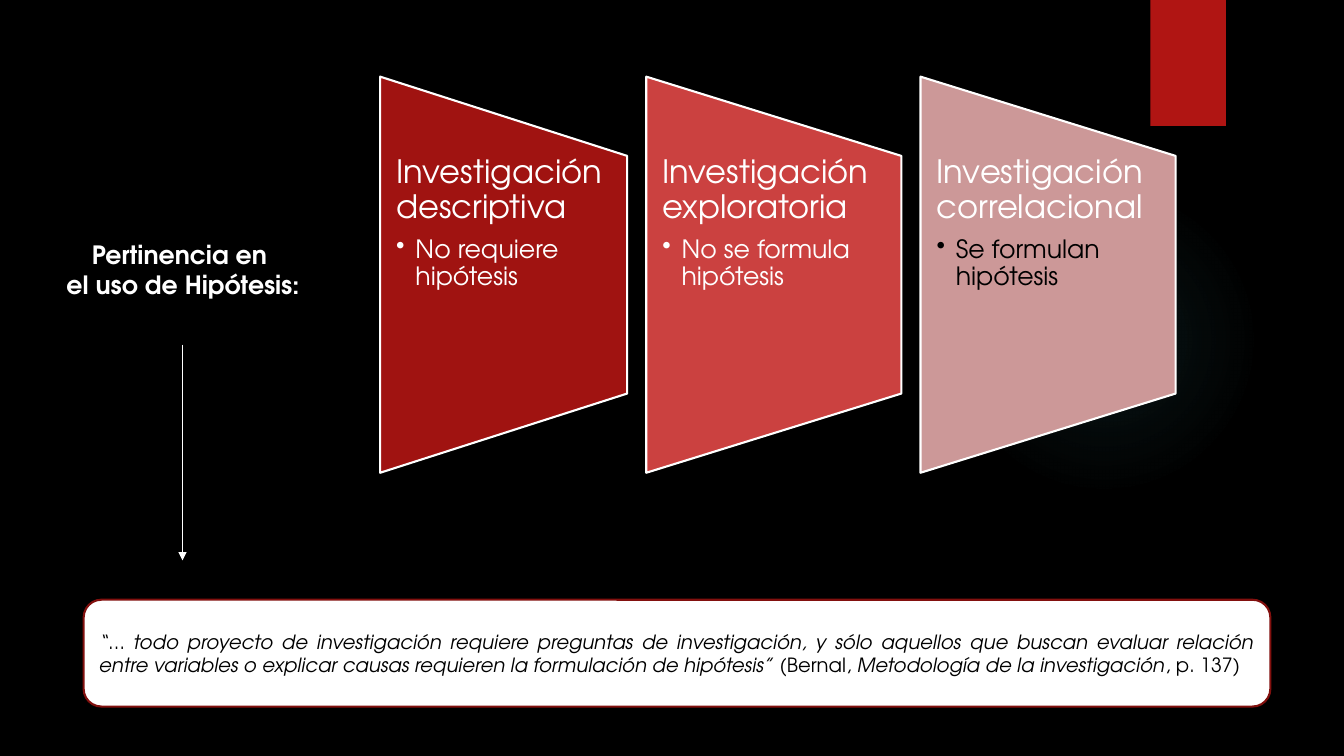
"""Build the slide on when each type of research needs a hypothesis."""
from dataclasses import dataclass

from lxml import etree
from pptx import Presentation
from pptx import util as u
from pptx.dml.color import RGBColor
from pptx.enum import shapes, text
from pptx.oxml import ns, parse_xml


@dataclass(frozen=True)
class Theme:
    font: str = "TeX Gyre Adventor"
    black: str = "000000"
    white: str = "FFFFFF"
    ribbon: str = "B01513"
    quote_edge: str = "82100E"
    glow: str = "50B9C1"
    panel_size: int = 23
    body_size: int = 18
    quote_size: int = 14
    edge: float = 1.5
    thin: float = 0.75


class HypothesisSlide:
    def __init__(self, deck, theme):
        self.theme = theme
        self.slide = deck.slides.add_slide(deck.slide_layouts[5])
        background = self.slide.background.fill
        background.solid()
        background.fore_color.rgb = RGBColor.from_string(theme.black)

    def style(self, paragraph, size, color, **flags):
        font = paragraph.font
        font.name, font.size = self.theme.font, u.Pt(size)
        font.color.rgb = RGBColor.from_string(color)
        for flag, value in flags.items():
            setattr(font, flag, value)

    def block(self, preset, box, fill, edge=None):
        block = self.slide.shapes.add_shape(preset, *map(u.Inches, box))
        block.shadow.inherit = False
        block.fill.solid()
        block.fill.fore_color.rgb = RGBColor.from_string(fill)
        if edge:
            block.line.color.rgb = RGBColor.from_string(edge)
            block.line.width = u.Pt(self.theme.edge)
        else:
            block.line.fill.background()
        return block

    def glow(self, box, stops):
        halo = self.block(shapes.MSO_SHAPE.OVAL, box, self.theme.glow)
        colors = "".join(
            f'<a:gs pos="{place * 1000}"><a:srgbClr val="{self.theme.glow}">'
            f'<a:alpha val="{opacity * 1000}"/></a:srgbClr></a:gs>'
            for place, opacity in stops)
        gradient = parse_xml(
            f'<a:gradFill {ns.nsdecls("a")}><a:gsLst>{colors}</a:gsLst>'
            '<a:path path="circle"><a:fillToRect l="50000" t="50000" '
            'r="50000" b="50000"/></a:path></a:gradFill>')
        solid = halo.element.spPr.find(ns.qn("a:solidFill"))
        solid.getparent().replace(solid, gradient)

    def title(self, box, lines):
        title = self.slide.shapes.title
        title.left, title.top, title.width, title.height = map(u.Inches, box)
        frame = title.text_frame
        frame.auto_size = text.MSO_AUTO_SIZE.NONE
        frame.vertical_anchor = text.MSO_ANCHOR.TOP
        frame.text = "\n".join(lines)
        for paragraph in frame.paragraphs:
            paragraph.alignment = text.PP_ALIGN.CENTER
            self.style(paragraph, self.theme.body_size, self.theme.white, bold=True)

    def panel(self, left, top, width, height, fill, heading, point, point_color):
        self.block(shapes.MSO_SHAPE.FLOWCHART_MANUAL_OPERATION,
                   (left + (width - height) / 2, top + (height - width) / 2,
                    height, width), fill, self.theme.white).rotation = 270
        label = self.slide.shapes.add_textbox(
            *map(u.Inches, (left, top + height / 5, width, height * 3 / 5)))
        frame = label.text_frame
        frame.word_wrap = True
        frame.margin_left = frame.margin_right = u.Inches(0.16)
        frame.margin_top = frame.margin_bottom = 0
        frame.text = f"{heading}\n{point}"
        first, second = frame.paragraphs
        first.line_spacing = second.line_spacing = 0.9
        first.space_after = u.Pt(8)
        second.level = 1
        properties = second._p.get_or_add_pPr()
        indent = u.Inches(0.19)
        properties.set("marL", str(indent))
        properties.set("indent", str(-indent))
        etree.SubElement(properties, ns.qn("a:buChar")).set("char", "•")
        self.style(first, self.theme.panel_size, self.theme.white)
        self.style(second, self.theme.body_size, point_color)

    def arrow(self, start, end):
        arrow = self.slide.shapes.add_connector(
            shapes.MSO_CONNECTOR.STRAIGHT, *map(u.Inches, start + end))
        arrow.line.color.rgb = RGBColor.from_string(self.theme.white)
        arrow.line.width = u.Pt(self.theme.thin)
        head = etree.SubElement(arrow.line._get_or_add_ln(), ns.qn("a:tailEnd"))
        head.set("type", "triangle")
        etree.SubElement(arrow._element.spPr, ns.qn("a:effectLst"))

    def quote(self, box, parts):
        card = self.block(shapes.MSO_SHAPE.ROUNDED_RECTANGLE, box,
                          self.theme.white, self.theme.quote_edge)
        frame = card.text_frame
        frame.word_wrap = True
        frame.vertical_anchor = text.MSO_ANCHOR.MIDDLE
        paragraph = frame.paragraphs[0]
        paragraph.alignment = text.PP_ALIGN.JUSTIFY
        for words, italic in parts:
            run = paragraph.add_run()
            run.text = words
            self.style(run, self.theme.quote_size, self.theme.black, italic=italic)


def main():
    deck = Presentation()
    deck.slide_width, deck.slide_height = u.Inches(13.33), u.Inches(7.5)
    theme = Theme()
    page = HypothesisSlide(deck, theme)
    page.glow((9.41, 1.83, 3.08, 3.08), ((0, 7), (36, 6), (69, 0)))
    page.block(shapes.MSO_SHAPE.RECTANGLE, (11.41, 0, 0.75, 1.25), theme.ribbon)

    panels = (
        (2.45, "A01311", "Investigación descriptiva", "No requiere hipótesis", theme.white),
        (2.53, "CB4140", "Investigación exploratoria", "No se formula hipótesis", theme.white),
        (2.53, "CC9898", "Investigación correlacional", "Se formulan hipótesis", theme.black),
    )
    left, gap = 3.77, 0.19
    for width, *content in panels:
        page.panel(left, 0.76, width, 3.93, *content)
        left += width + gap

    page.title((0.35, 2.32, 2.93, 0.71), ("Pertinencia en ", "el uso de Hipótesis:"))
    page.arrow((1.81, 3.42), (1.81, 5.56))
    page.quote((0.83, 5.95, 11.77, 1.06), (
        ("“… todo proyecto de investigación requiere preguntas de investigación, "
         "y sólo aquellos que buscan evaluar relación entre variables o explicar "
         "causas requieren la formulación de hipótesis” ", True),
        ("(Bernal, ", False),
        ("Metodología de la investigación", True),
        (", p. 137)", False),
    ))
    deck.save("out.pptx")


if __name__ == "__main__":
    main()
